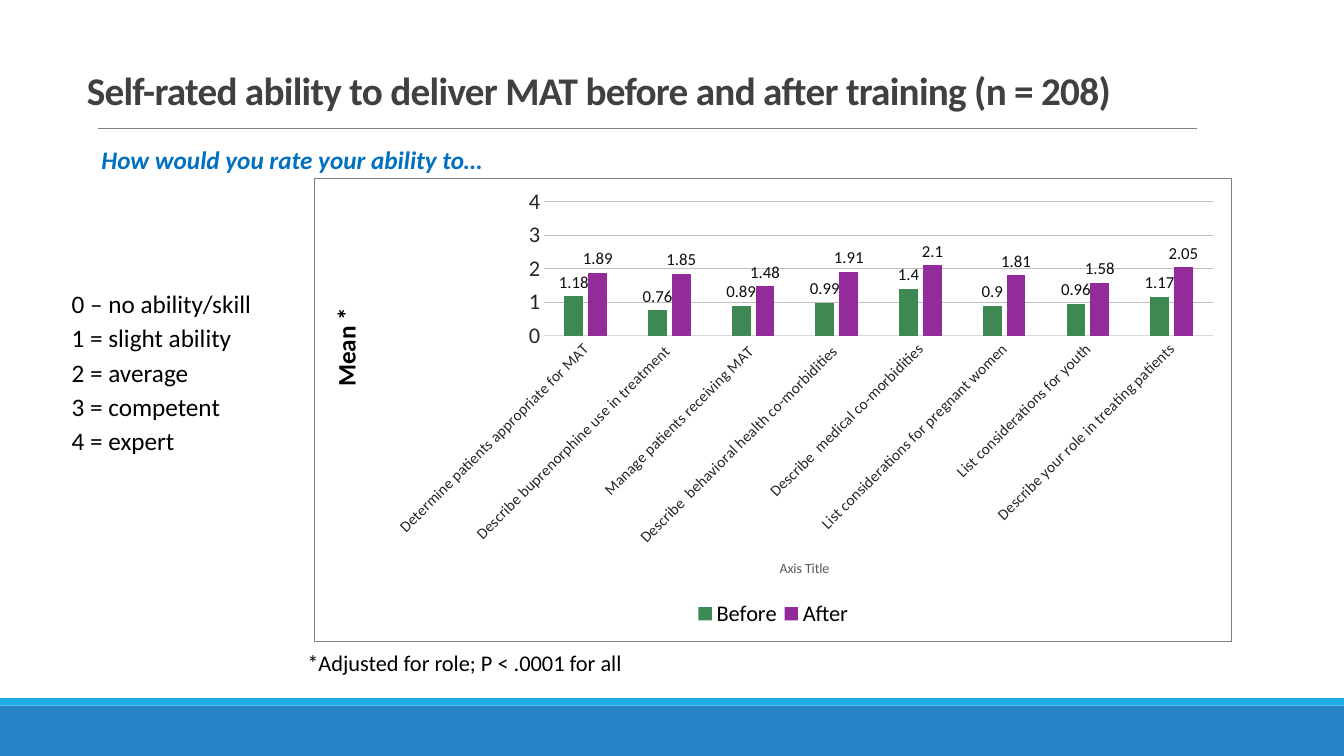
from pptx import Presentation
from pptx.chart.data import CategoryChartData
from pptx.dml.color import RGBColor
from pptx.enum.chart import XL_CHART_TYPE, XL_LABEL_POSITION, XL_LEGEND_POSITION, XL_TICK_MARK
from pptx.enum.shapes import MSO_CONNECTOR, MSO_SHAPE
from pptx.enum.text import MSO_ANCHOR, MSO_AUTO_SIZE
from pptx.oxml import parse_xml
from pptx.oxml.ns import nsdecls, qn
from pptx.util import Inches, Pt

BLACK = RGBColor(0x00, 0x00, 0x00)
INK = RGBColor(0x0D, 0x0D, 0x0D)
CHARCOAL = RGBColor(0x26, 0x26, 0x26)
TITLE_GRAY = RGBColor(0x40, 0x40, 0x40)
CAPTION_GRAY = RGBColor(0x59, 0x59, 0x59)
RULE_GRAY = RGBColor(0x80, 0x80, 0x80)
GRID_GRAY = RGBColor(0xBF, 0xBF, 0xBF)
AXIS_GRAY = RGBColor(0xD9, 0xD9, 0xD9)
QUESTION_BLUE = RGBColor(0x00, 0x70, 0xC0)
BAND_BLUE = RGBColor(0x26, 0x83, 0xC6)
STRIPE_BLUE = RGBColor(0x1C, 0xAD, 0xE4)
BEFORE_GREEN = RGBColor(0x3E, 0x88, 0x53)
AFTER_PURPLE = RGBColor(0x93, 0x2B, 0x9B)

COLUMN_CLUSTERED = XL_CHART_TYPE.COLUMN_CLUSTERED
OUTSIDE_END = XL_LABEL_POSITION.OUTSIDE_END
LEGEND_BOTTOM = XL_LEGEND_POSITION.BOTTOM
NO_TICK = XL_TICK_MARK.NONE
STRAIGHT = MSO_CONNECTOR.STRAIGHT
RECTANGLE = MSO_SHAPE.RECTANGLE
TOP, BOTTOM = MSO_ANCHOR.TOP, MSO_ANCHOR.BOTTOM
FIXED, GROW = MSO_AUTO_SIZE.NONE, MSO_AUTO_SIZE.SHAPE_TO_FIT_TEXT

COLUMNS, ROWS = 160, 90
SCALE = ["0 – no ability/skill", "1 = slight ability", "2 = average", "3 = competent", "4 = expert"]
ABILITIES = [
    "Determine patients appropriate for MAT",
    "Describe buprenorphine use in treatment ",
    "Manage patients receiving MAT ",
    "Describe  behavioral health co-morbidities ",
    "Describe  medical co-morbidities",
    "List considerations for pregnant women",
    "List considerations for youth",
    "Describe your role in treating patients",
]
RATINGS = [
    ("Before", BEFORE_GREEN, [1.18, 0.76, 0.89, 0.99, 1.4, 0.9, 0.96, 1.17]),
    ("After", AFTER_PURPLE, [1.89, 1.85, 1.48, 1.91, 2.1, 1.81, 1.58, 2.05]),
]


class SlideBuilder:
    """Places styled elements on one page, measured in grid columns and rows."""

    def __init__(self, deck, font_name="Calibri"):
        self.font_name = font_name
        self.column = deck.slide_width / COLUMNS
        self.row = deck.slide_height / ROWS
        self.page = deck.slides.add_slide(deck.slide_layouts[6])

    def area(self, left, top, width, height):
        return (round(left * self.column), round(top * self.row),
                round(width * self.column), round(height * self.row))

    def style(self, font, size, color, bold=False, italic=False):
        font.name, font.size = self.font_name, Pt(size)
        font.bold, font.italic = bold, italic
        font.color.rgb = color

    def line(self, line, color, width):
        line.color.rgb = color
        line.width = Pt(width)

    def band(self, color, *place):
        band = self.page.shapes.add_shape(RECTANGLE, *self.area(*place))
        band.shadow.inherit = False
        band.fill.solid()
        band.fill.fore_color.rgb = color
        band.line.fill.background()

    def rule(self, left, right, top):
        x, y, width, _ = self.area(left, top, right - left, 0)
        rule = self.page.shapes.add_connector(STRAIGHT, x, y, x + width, y)
        self.line(rule.line, RULE_GRAY, 0.5)
        rule.element.spPr.append(parse_xml(f"<a:effectLst {nsdecls('a')}/>"))

    def text(self, lines, place, size, color=BLACK, bold=False, italic=False,
             anchor=TOP, fit=GROW, before=0, spacing=1.0, tracking=0):
        box = self.page.shapes.add_textbox(*self.area(*place))
        frame = box.text_frame
        frame.text = "\n".join(lines)
        frame.word_wrap = True
        frame.auto_size = fit
        frame.vertical_anchor = anchor
        for para in frame.paragraphs:
            para.space_before = Pt(before)
            para.line_spacing = spacing
            for span in para.runs:
                self.style(span.font, size, color, bold, italic)
        for properties in box.element.iter(qn("a:rPr")):
            properties.set("spc", str(tracking))

    def arrange(self, part, target="", **shares):
        layout = part.find(qn("c:layout"))
        if layout is not None:
            part.remove(layout)
        inner = f"<c:layoutTarget val='{target}'/>" if target else ""
        modes = "".join(f"<c:{key}Mode val='edge'/>" for key in "xy")
        sizes = "".join(f"<c:{key} val='{share}'/>" for key, share in shares.items())
        layout = parse_xml(f"<c:layout {nsdecls('c')}><c:manualLayout>"
                           f"{inner}{modes}{sizes}</c:manualLayout></c:layout>")
        leading = part.find(qn("c:tx"))
        if leading is None:
            leading = part.find(qn("c:legendPos"))
        if leading is None:
            part.insert(0, layout)
        else:
            leading.addnext(layout)

    def axis_title(self, axis, words, size, color, bold=False):
        axis.axis_title.text_frame.text = words
        span = axis.axis_title.text_frame.paragraphs[0].runs[0]
        self.style(span.font, size, color, bold)

    def chart(self, categories, ratings, place):
        data = CategoryChartData()
        data.categories = categories
        for name, _, values in ratings:
            data.add_series(name, values)
        chart = self.page.shapes.add_chart(COLUMN_CLUSTERED, *self.area(*place), data).chart
        self.style(chart.font, 10, BLACK)
        chart.has_title = False
        chart.has_legend = True
        chart.legend.position = LEGEND_BOTTOM
        chart.legend.include_in_layout = False
        self.style(chart.legend.font, 16, BLACK)
        self.bars(chart.plots[0], ratings)
        self.axes(chart)
        root = chart.element
        self.arrange(root.find(f".//{qn('c:plotArea')}"), "inner", x=0.25, y=0.05, w=0.73, h=0.29)
        self.arrange(root.find(f".//{qn('c:legend')}"), x=0.41, y=0.9, w=0.18, h=0.08)
        self.arrange(root.find(f".//{qn('c:valAx')}/{qn('c:title')}"), x=0.01, y=0.27)
        root.find(qn("c:chart")).addnext(parse_xml(
            f"<c:spPr {nsdecls('c', 'a')}><a:noFill/><a:ln w='{Pt(0.75)}'><a:solidFill>"
            f"<a:srgbClr val='{RULE_GRAY}'/></a:solidFill></a:ln></c:spPr>"))

    def bars(self, plot, ratings):
        plot.gap_width, plot.overlap = 219, -27
        plot.vary_by_categories = False
        for series, (_, color, _) in zip(plot.series, ratings):
            series.format.fill.solid()
            series.format.fill.fore_color.rgb = color
            labels = series.data_labels
            labels.show_value = True
            labels.position = OUTSIDE_END
            self.style(labels.font, 12, INK)

    def axes(self, chart):
        category, value = chart.category_axis, chart.value_axis
        for axis, size in ((category, 11), (value, 16)):
            axis.major_tick_mark = axis.minor_tick_mark = NO_TICK
            self.style(axis.tick_labels.font, size, CHARCOAL)
        self.line(category.format.line, AXIS_GRAY, 0.75)
        self.axis_title(category, "Axis Title", 10, CAPTION_GRAY)
        body = chart.element.find(f".//{qn('c:catAx')}/{qn('c:txPr')}/{qn('a:bodyPr')}")
        body.set("rot", "-2700000")
        value.minimum_scale, value.maximum_scale, value.major_unit = 0, 4, 1
        value.format.line.fill.background()
        self.line(value.major_gridlines.format.line, GRID_GRAY, 0.75)
        self.axis_title(value, "Mean *", 18, BLACK, bold=True)


def main():
    deck = Presentation()
    deck.slide_width, deck.slide_height = Inches(40 / 3), Inches(7.5)
    slide = SlideBuilder(deck)
    slide.band(BAND_BLUE, 0, 84, COLUMNS, 6)
    slide.band(STRIPE_BLUE, 0, 83.1, COLUMNS, 0.9)
    slide.rule(11.7, 142.5, 15.25)
    slide.text(["Self-rated ability to deliver MAT before and after training (n = 208)"],
               (9.15, 4, 132, 10.1), 28, TITLE_GRAY, bold=True,
               anchor=BOTTOM, fit=FIXED, spacing=0.85, tracking=-50)
    slide.text(["*Adjusted for role; P < .0001 for all"], (35.4, 76.7, 60.4, 4.4), 16)
    slide.text(["How would you rate your ability to…"], (10.9, 16.6, 49, 4.8), 18,
               QUESTION_BLUE, bold=True, italic=True)
    slide.chart(ABILITIES, RATINGS, (37.4, 21.2, 109.3, 55.25))
    slide.text(SCALE, (7.35, 33.7, 24.6, 21.4), 18, before=3)
    deck.save("out.pptx")


if __name__ == "__main__":
    main()
